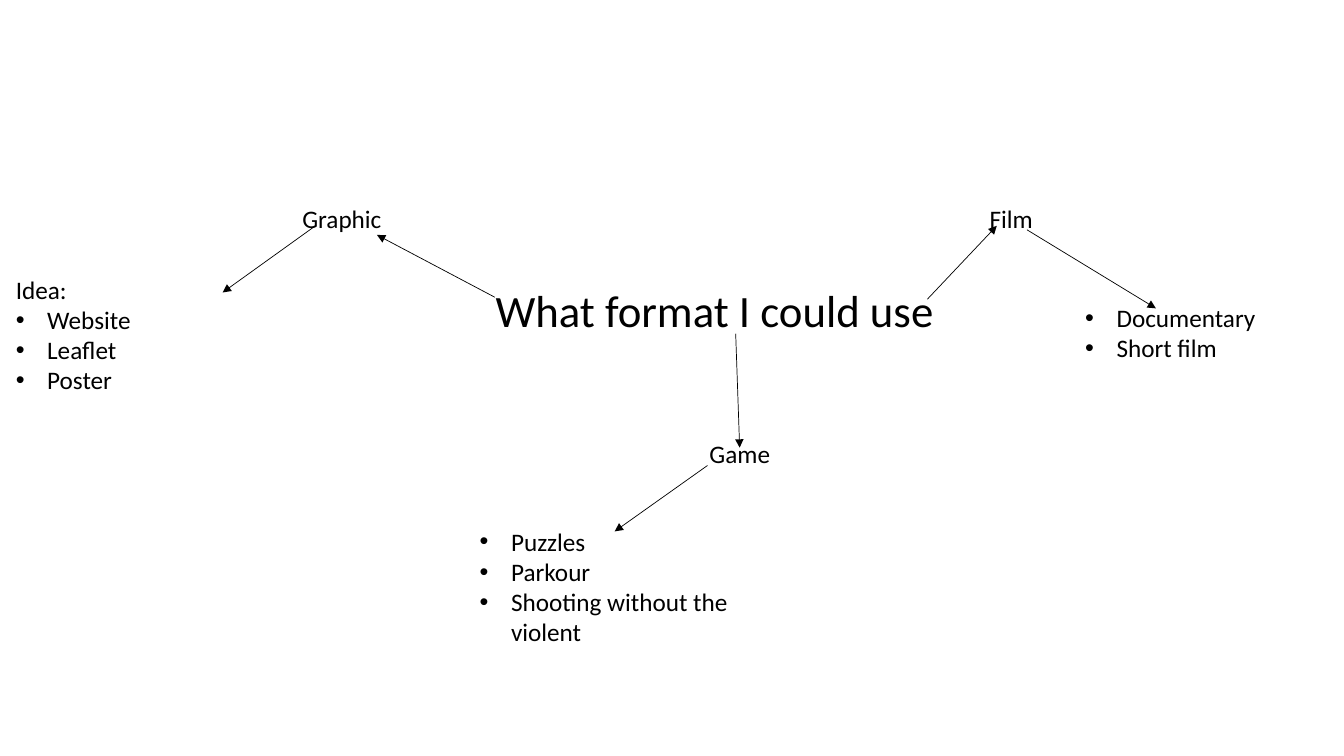
from lxml import etree
from pptx import Presentation
from pptx.dml.color import RGBColor
from pptx.enum.shapes import MSO_CONNECTOR
from pptx.enum.text import MSO_ANCHOR as Anchor, MSO_AUTO_SIZE as AutoSize
from pptx.oxml.ns import qn
from pptx.util import Cm, Pt

# Content: positions in cm
COLORS = {"ink": "000000", "paper": "FFFFFF"}
FONT = "Calibri"
BULLET = "•"
QUESTION = ("What format I could use", (12.24, 6.05, 12.12, 3.68))
BRANCHES = [
    {"format": "Graphic", "at": (7.37, 5.0),
     "from_question": ((12.47, 7.49), (9.5, 5.92)),
     "to_ideas": ((7.95, 5.69), (5.61, 7.37)),
     "heading": "Idea:\u00a0", "ideas": ["Website", "Leaflet", "Poster"],
     "ideas_box": (0.15, 6.78, 4.11)},
    {"format": "Film", "at": (24.69, 5.0),
     "from_question": ((23.37, 7.54), (25.12, 5.69)),
     "to_ideas": ((25.88, 5.79), (29.13, 7.77)),
     "heading": None, "ideas": ["Documentary", "Short film"],
     "ideas_box": (27.1, 7.49, 1.8)},
    {"format": "Game", "at": (17.63, 10.92),
     "from_question": ((18.54, 8.41), (18.64, 11.28)),
     "to_ideas": ((17.83, 11.73), (15.49, 13.39)),
     "heading": None,
     "ideas": ["Puzzles", "Parkour", "Shooting without the violent"],
     "ideas_box": (11.84, 13.13, 3.33)},
]
BRANCH_WIDTH, FORMAT_HEIGHT, INDENT = 7.62, 1.02, 0.79

deck = Presentation()
deck.slide_width, deck.slide_height = Cm(33.87), Cm(19.05)
slide = deck.slides.add_slide(deck.slide_layouts[6])
slide.background.fill.solid()
slide.background.fill.fore_color.rgb = RGBColor.from_string(COLORS["paper"])


def add_text(lines, box, size=18):
    frame = slide.shapes.add_textbox(*map(Cm, box)).text_frame
    frame.word_wrap = True
    frame.text = "\n".join(lines)
    for paragraph in frame.paragraphs:
        for run in paragraph.runs:
            run.font.name, run.font.size = FONT, Pt(size)
            run.font.color.rgb = RGBColor.from_string(COLORS["ink"])
    return frame


def add_bullet(paragraph):
    props = paragraph._p.get_or_add_pPr()
    props.set("marL", str(Cm(INDENT)))
    props.set("indent", str(-Cm(INDENT)))
    etree.SubElement(props, qn("a:buFont"), typeface="Arial")
    etree.SubElement(props, qn("a:buChar"), char=BULLET)


def add_arrow(start, end):
    arrow = slide.shapes.add_connector(MSO_CONNECTOR.STRAIGHT, *map(Cm, start + end))
    arrow.line.color.rgb = RGBColor.from_string(COLORS["ink"])
    arrow.line.width = Pt(0.5)
    etree.SubElement(arrow.line._get_or_add_ln(), qn("a:tailEnd"), type="triangle")
    etree.SubElement(arrow._element.spPr, qn("a:effectLst"))


# Central question
question_text, question_box = QUESTION
question = add_text([question_text], question_box, 32)
question.vertical_anchor = Anchor.MIDDLE
question.paragraphs[0].line_spacing = 0.9

# Branches: format name, its ideas and the two arrows
for branch in BRANCHES:
    add_arrow(*branch["from_question"])
    format_name = add_text([branch["format"]],
                           (*branch["at"], BRANCH_WIDTH, FORMAT_HEIGHT))
    format_name.auto_size = AutoSize.SHAPE_TO_FIT_TEXT
    add_arrow(*branch["to_ideas"])

    left, top, height = branch["ideas_box"]
    heading = [branch["heading"]] if branch["heading"] else []
    ideas = add_text(heading + branch["ideas"], (left, top, BRANCH_WIDTH, height))
    ideas.auto_size = AutoSize.SHAPE_TO_FIT_TEXT
    for idea in ideas.paragraphs[len(heading):]:
        add_bullet(idea)

deck.save("out.pptx")
